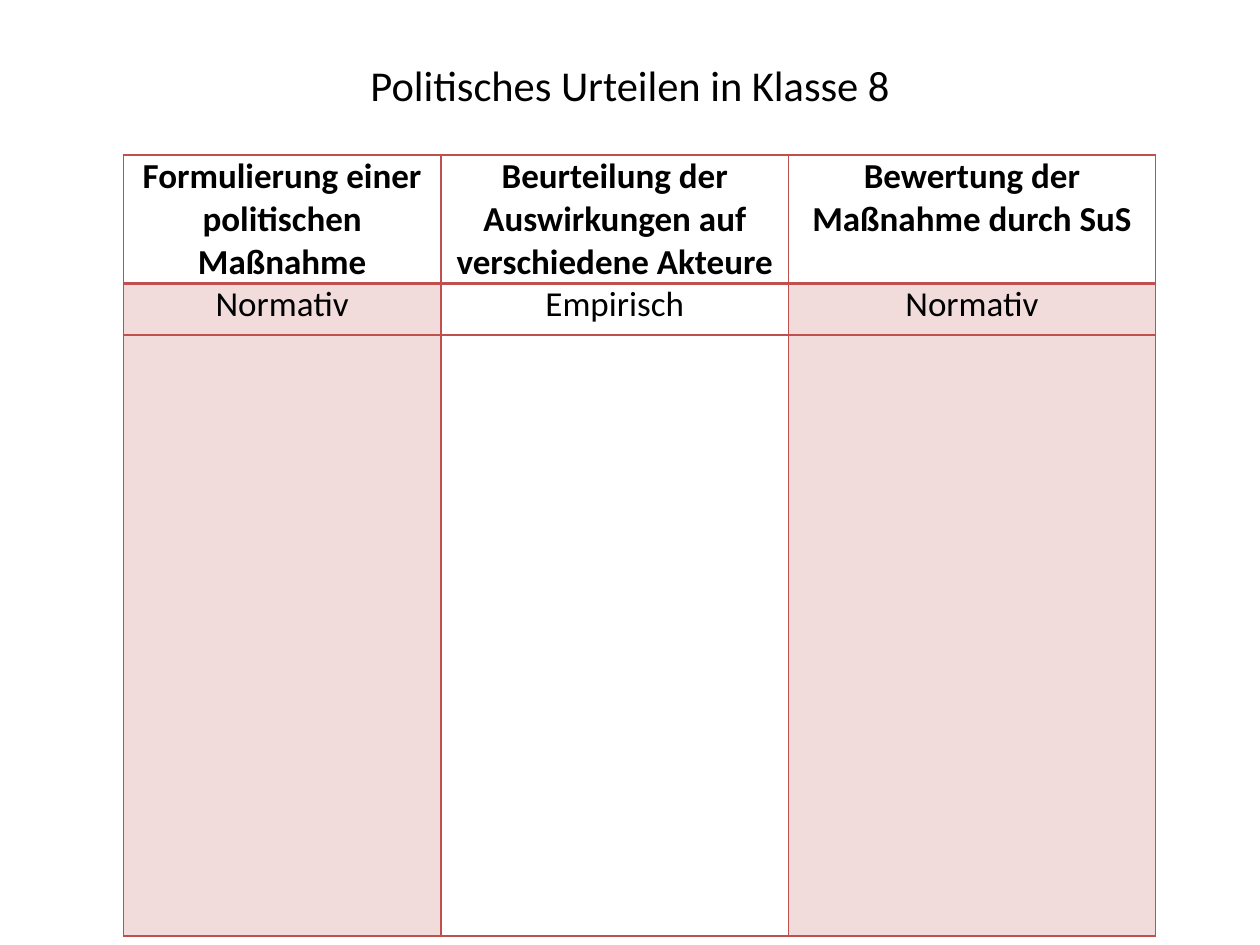
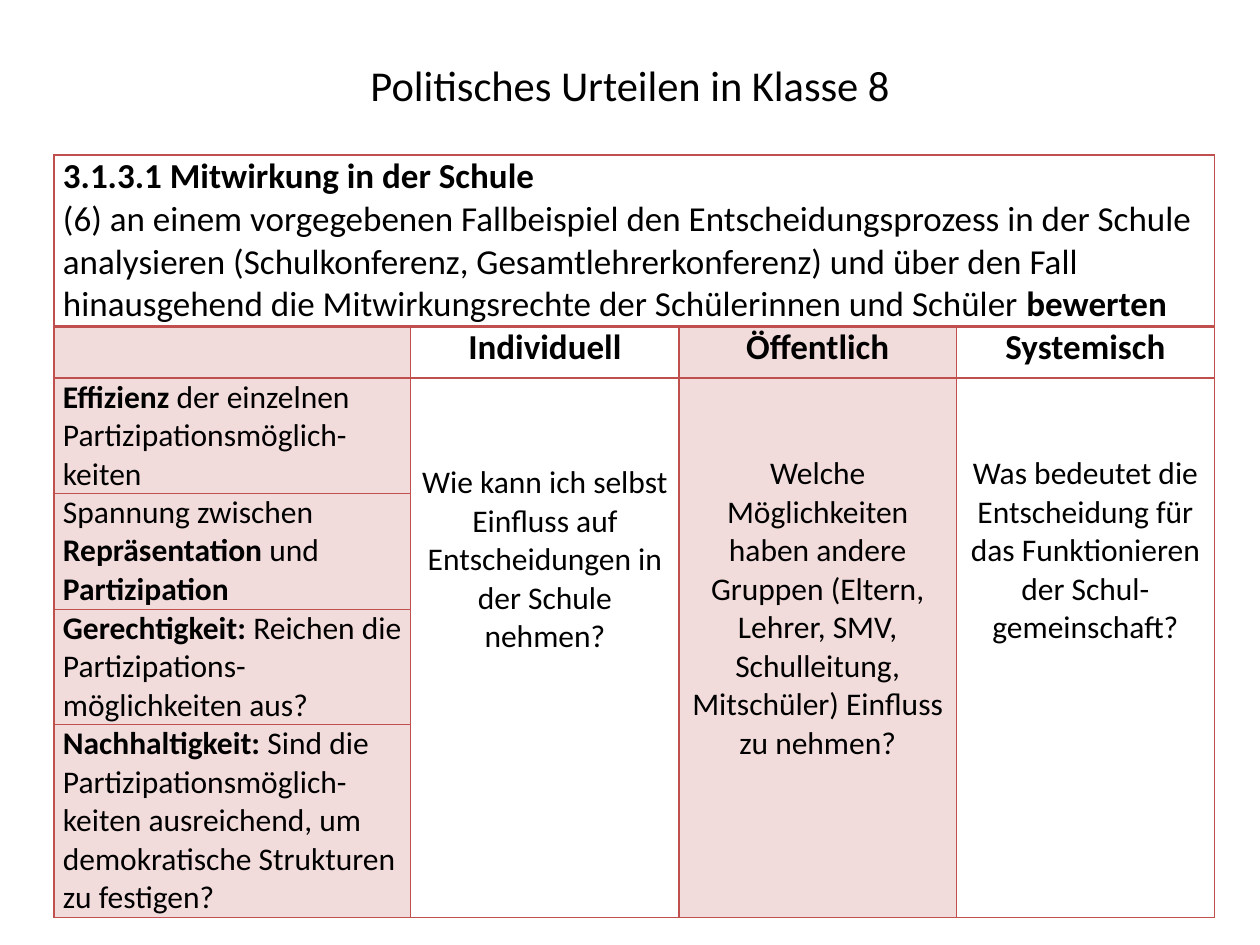
from dataclasses import dataclass
from itertools import product

from lxml import etree
from pptx import Presentation
from pptx import util as u
from pptx.dml.color import RGBColor
from pptx.enum import text
from pptx.oxml import ns


@dataclass(frozen=True)
class Theme:
    font: str = "Calibri"
    ink: str = "000000"
    rule: str = "C0504D"
    tint: str = "F2DCDB"
    title_size: float = 24.3
    head_size: float = 20
    body_size: float = 18
    thin: float = 1
    thick: float = 2
    table_top: float = 1.23
    side_margin: float = 0.07


THEME = Theme()
TITLE = "Politisches Urteilen in Klasse 8"
CENTER, LEFT = text.PP_ALIGN.CENTER, text.PP_ALIGN.LEFT


# --- Text: passages between ** marks are bold ---
def add_runs(paragraph, marked, size, align):
    paragraph.alignment = align
    for index, part in enumerate(marked.split("**")):
        if part:
            run = paragraph.add_run()
            run.text = part
            run.font.name = THEME.font
            run.font.size = u.Pt(size)
            run.font.bold = index % 2 == 1
            run.font.color.rgb = RGBColor.from_string(THEME.ink)


def write_cell(cell, *paragraphs, size=THEME.head_size, align=CENTER, top=0):
    cell.margin_top = u.Inches(top)
    frame = cell.text_frame
    for index, marked in enumerate(paragraphs):
        paragraph = frame.add_paragraph() if index else frame.paragraphs[0]
        add_runs(paragraph, marked, size, align)


# --- Slide with the shared title ---
def add_titled_slide(deck):
    slide = deck.slides.add_slide(deck.slide_layouts[0])
    subtitle = slide.placeholders[1].element
    subtitle.getparent().remove(subtitle)
    title = slide.shapes.title
    title.left, title.top = u.Inches(0.75), u.Inches(0.44)
    title.width, title.height = u.Inches(8.5), u.Inches(1.1)
    frame = title.text_frame
    frame.auto_size = text.MSO_AUTO_SIZE.NONE
    frame.vertical_anchor = text.MSO_ANCHOR.TOP
    frame.margin_top = u.Inches(0.03)
    add_runs(frame.paragraphs[0], TITLE, THEME.title_size, CENTER)
    return slide


# --- Ruled table with tinted cells ---
def set_borders(cell, **widths):
    properties = cell._tc.get_or_add_tcPr()
    for index, side in enumerate("LRTB"):
        line = etree.Element(ns.qn(f"a:ln{side}"),
                             w=str(u.Pt(widths.get(side, THEME.thin))))
        fill = etree.SubElement(line, ns.qn("a:solidFill"))
        etree.SubElement(fill, ns.qn("a:srgbClr"), val=THEME.rule)
        properties.insert(index, line)


def add_ruled_table(slide, left, widths, heights, is_tinted):
    frame = slide.shapes.add_table(
        len(heights), len(widths), u.Inches(left), u.Inches(THEME.table_top),
        u.Inches(sum(widths)), u.Inches(sum(heights)))
    table = frame.table
    table.first_row = table.horz_banding = False
    for column, width in zip(table.columns, widths):
        column.width = u.Inches(width)
    for row, height in zip(table.rows, heights):
        row.height = u.Inches(height)
    for row, column in product(range(len(heights)), range(len(widths))):
        cell = table.cell(row, column)
        cell.margin_left = cell.margin_right = u.Inches(THEME.side_margin)
        cell.margin_top = cell.margin_bottom = 0
        if is_tinted(row, column):
            cell.fill.solid()
            cell.fill.fore_color.rgb = RGBColor.from_string(THEME.tint)
        else:
            cell.fill.background()
        # The heading row is closed by a thicker rule
        set_borders(cell, T=THEME.thick if row == 1 else THEME.thin,
                    B=THEME.thick if row == 0 else THEME.thin)
    return table


# --- Slide 1: three steps of judgement ---
def build_steps(deck):
    steps = [
        ("Formulierung einer politischen Maßnahme", "Normativ"),
        ("Beurteilung der Auswirkungen auf verschiedene Akteure", "Empirisch"),
        ("Bewertung der Maßnahme durch SuS", "Normativ"),
    ]
    table = add_ruled_table(
        add_titled_slide(deck), 0.98, [2.52, 2.76, 2.91], [1.02, 0.41, 4.77],
        lambda row, column: row > 0 and column % 2 == 0)
    for column, (step, judgement) in enumerate(steps):
        write_cell(table.cell(0, column), f"**{step}**")
        write_cell(table.cell(1, column), judgement)


# --- Slide 2: criteria and perspectives ---
def build_criteria(deck):
    criteria = [
        "**Effizienz** der einzelnen Partizipationsmöglich-keiten",
        "Spannung zwischen **Repräsentation** und **Partizipation**",
        "**Gerechtigkeit:** Reichen die Partizipations-möglichkeiten aus?",
        "**Nachhaltigkeit:** Sind die Partizipationsmöglich-keiten ausreichend, "
        "um demokratische Strukturen zu festigen?",
    ]
    # Perspective, question, space above the question
    perspectives = [
        ("Individuell", "Wie kann ich selbst Einfluss auf Entscheidungen in "
         "der Schule nehmen?", 0.68),
        ("Öffentlich", "Welche Möglichkeiten haben andere Gruppen (Eltern, "
         "Lehrer, SMV, Schulleitung, Mitschüler) Einfluss zu nehmen?", 0.61),
        ("Systemisch", "Was bedeutet die Entscheidung für das Funktionieren "
         "der Schul-gemeinschaft?", 0.61),
    ]
    table = add_ruled_table(
        add_titled_slide(deck), 0.43, [2.83, 2.13, 2.2, 2.05],
        [1.36, 0.41, 0.91, 0.92, 0.91, 1.53],
        lambda row, column: row > 0 and column % 2 == 0)

    standard = table.cell(0, 0)
    standard.merge(table.cell(0, 3))
    write_cell(
        standard, "**3.1.3.1 Mitwirkung in der Schule**",
        "(6) an einem vorgegebenen Fallbeispiel den Entscheidungsprozess in "
        "der Schule analysieren (Schulkonferenz, Gesamtlehrerkonferenz) und "
        "über den Fall hinausgehend die Mitwirkungsrechte der Schülerinnen "
        "und Schüler **bewerten**", align=LEFT)

    for row, criterion in enumerate(criteria, 2):
        write_cell(table.cell(row, 0), criterion,
                   size=THEME.body_size, align=LEFT)
    for column, (perspective, question, gap) in enumerate(perspectives, 1):
        write_cell(table.cell(1, column), f"**{perspective}**")
        question_cell = table.cell(2, column)
        question_cell.merge(table.cell(5, column))
        write_cell(question_cell, question, size=THEME.body_size, top=gap)


def main():
    deck = Presentation()
    deck.slide_width, deck.slide_height = u.Inches(10), u.Inches(7.5)
    build_steps(deck)
    build_criteria(deck)
    deck.save("out.pptx")


if __name__ == "__main__":
    main()
